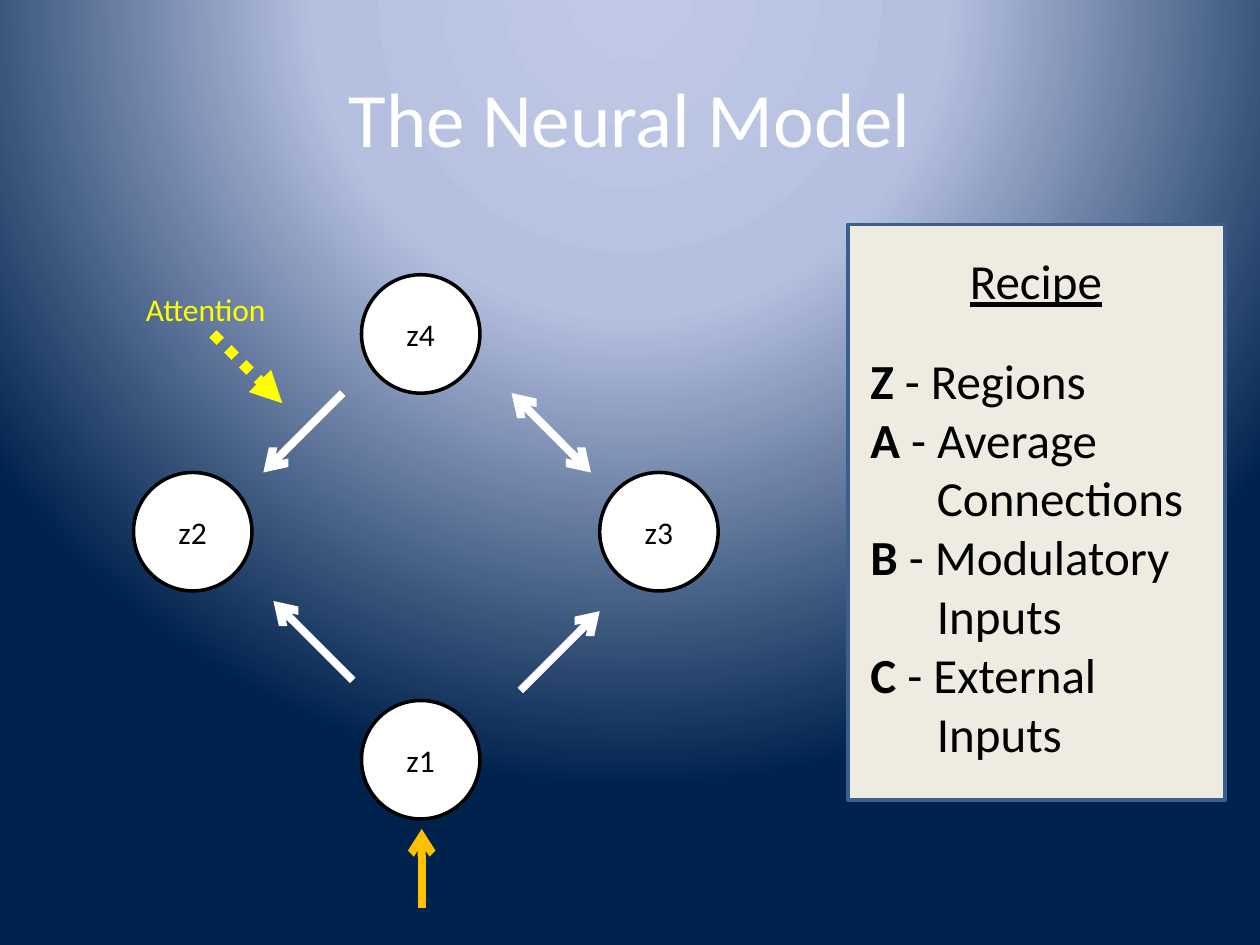
"""Build the neural model slide: four linked regions and a recipe of terms."""
from typing import NamedTuple, Optional

from lxml import etree
from pptx import Presentation
from pptx.dml.color import RGBColor
from pptx.enum.dml import MSO_LINE
from pptx.enum.shapes import MSO_CONNECTOR, MSO_SHAPE
from pptx.enum.text import MSO_ANCHOR, PP_ALIGN
from pptx.oxml import parse_xml
from pptx.oxml.ns import nsdecls, qn
from pptx.shapes.autoshape import Shape
from pptx.slide import Slide
from pptx.text.text import TextFrame
from pptx.util import Pt

STRAIGHT = MSO_CONNECTOR.STRAIGHT
ELLIPSE, RECTANGLE = MSO_SHAPE.OVAL, MSO_SHAPE.RECTANGLE
MIDDLE = MSO_ANCHOR.MIDDLE
LEFT, CENTER = PP_ALIGN.LEFT, PP_ALIGN.CENTER
DOTTED = MSO_LINE.ROUND_DOT

WHITE = RGBColor(0xFF, 0xFF, 0xFF)
BLACK = RGBColor(0x00, 0x00, 0x00)
YELLOW = RGBColor(0xFF, 0xFF, 0x00)
ORANGE = RGBColor(0xFF, 0xC0, 0x00)
CREAM = RGBColor(0xEE, 0xEC, 0xE1)
BORDER_BLUE = RGBColor(0x3A, 0x5F, 0x8C)
BACKDROP_STOPS = (
    (0, RGBColor(0xBF, 0xC9, 0xE5)),
    (40, RGBColor(0xB5, 0xC0, 0xE0)),
    (100, RGBColor(0x00, 0x23, 0x4D)),
)

FONT = "Calibri"
DIAMETER = 67.7
STEP = 45.36
HANGING = 38


class Box(NamedTuple):
    left: float
    top: float
    width: float
    height: float


class Region(NamedTuple):
    label: str
    left: float
    top: float


class Arrow(NamedTuple):
    x: float
    y: float
    dx: float
    dy: float
    color: RGBColor = WHITE
    weight: float = 4.5
    head: Optional[str] = None
    tail: str = "arrow"
    dash: Optional[MSO_LINE] = None


class Term(NamedTuple):
    letter: str
    meaning: str
    continuation: str = ""


REGIONS = (
    Region("z4", 206.6, 157),
    Region("z2", 76.3, 270),
    Region("z3", 342.7, 270),
    Region("z1", 206.6, 400.3),
)
ARROWS = (
    Arrow(195.84, 224.64, -STEP, STEP),
    Arrow(337.68, 270, -STEP, -STEP, head="arrow"),
    Arrow(297.36, 394.56, STEP, -STEP),
    Arrow(201.6, 388.8, -STEP, -STEP),
    Arrow(121.7, 190.8, 39.6, 39.6, YELLOW, 6, tail="triangle", dash=DOTTED),
    Arrow(241, 519.1, 0, -STEP, ORANGE),
)
RECIPE = (
    Term("Z", "Regions"),
    Term("A", "Average", "Connections"),
    Term("B", "Modulatory", "Inputs"),
    Term("C", "External", "Inputs"),
)


def paint_background(slide: Slide) -> None:
    """Fill the slide with a radial gradient centred above its top edge."""
    stops = "".join(
        f'<a:gs pos="{percent * 1000}"><a:srgbClr val="{color}"/></a:gs>'
        for percent, color in BACKDROP_STOPS
    )
    slide.element.cSld.insert(0, parse_xml(
        f'<p:bg {nsdecls("p", "a")}><p:bgPr><a:gradFill rotWithShape="1">'
        f'<a:gsLst>{stops}</a:gsLst><a:path path="circle">'
        '<a:fillToRect l="50000" t="-80000" r="50000" b="180000"/></a:path>'
        '</a:gradFill><a:effectLst/></p:bgPr></p:bg>'
    ))


def format_text(frame: TextFrame, size: float, color: RGBColor, align: PP_ALIGN) -> None:
    """Give every paragraph and run in a frame one common look."""
    for paragraph in frame.paragraphs:
        paragraph.alignment = align
        for run in paragraph.runs:
            run.font.name = FONT
            run.font.size = Pt(size)
            run.font.color.rgb = color


def add_outlined(slide: Slide, preset: MSO_SHAPE, box: Box, fill: RGBColor, line: RGBColor) -> Shape:
    """Draw a filled preset shape with a two-point outline."""
    shape = slide.shapes.add_shape(preset, *map(Pt, box))
    shape.shadow.inherit = False
    shape.fill.solid()
    shape.fill.fore_color.rgb = fill
    shape.line.color.rgb = line
    shape.line.width = Pt(2)
    return shape


def add_region(slide: Slide, region: Region) -> None:
    """Draw one labelled circle of the model."""
    circle = add_outlined(
        slide, ELLIPSE, Box(region.left, region.top, DIAMETER, DIAMETER), WHITE, BLACK
    )
    frame = circle.text_frame
    frame.text = region.label
    frame.vertical_anchor = MIDDLE
    format_text(frame, 18, BLACK, CENTER)


def add_arrow(slide: Slide, arrow: Arrow) -> None:
    """Draw one straight arrow from its start by its offset."""
    x, y, dx, dy = arrow[:4]
    connector = slide.shapes.add_connector(STRAIGHT, *map(Pt, (x, y, x + dx, y + dy)))
    connector.line.color.rgb = arrow.color
    connector.line.width = Pt(arrow.weight)
    if arrow.dash is not None:
        connector.line.dash_style = arrow.dash
    properties = connector.element.spPr
    outline = properties.find(qn("a:ln"))
    for tag, style in (("a:headEnd", arrow.head), ("a:tailEnd", arrow.tail)):
        if style:
            etree.SubElement(outline, qn(tag), type=style)
    etree.SubElement(properties, qn("a:effectLst"))


def add_caption(slide: Slide, text: str, box: Box, size: float, color: RGBColor,
                align: PP_ALIGN = LEFT, wrap: bool = False) -> TextFrame:
    """Write a single line of text in its own box."""
    frame = slide.shapes.add_textbox(*map(Pt, box)).text_frame
    frame.text = text
    frame.word_wrap = wrap
    format_text(frame, size, color, align)
    return frame


def add_recipe(slide: Slide) -> None:
    """List the model's terms, with indented continuation lines."""
    frame = slide.shapes.add_textbox(*map(Pt, Box(490.3, 196.6, 203.8, 244.8))).text_frame
    frame.word_wrap = True
    lines = [
        line for term in RECIPE
        for line in ((term.letter, f" - {term.meaning}"), ("", term.continuation)) if line[1]
    ]
    for index, (letter, wording) in enumerate(lines):
        paragraph = frame.add_paragraph() if index else frame.paragraphs[0]
        if letter:
            bold_letter = paragraph.add_run()
            bold_letter.text = letter
            bold_letter.font.bold = True
        else:
            paragraph._p.get_or_add_pPr().set("marL", str(Pt(HANGING)))
        paragraph.add_run().text = wording
    format_text(frame, 28, BLACK, LEFT)


def main() -> None:
    """Assemble and save the slide."""
    presentation = Presentation()
    presentation.slide_width, presentation.slide_height = Pt(720), Pt(540)
    slide = presentation.slides.add_slide(presentation.slide_layouts[6])
    paint_background(slide)
    add_outlined(slide, RECTANGLE, Box(484.6, 128.2, 215.3, 329), CREAM, BORDER_BLUE)
    title = add_caption(slide, "The Neural Model", Box(36, 21.6, 648, 90), 44, WHITE, CENTER, True)
    title.vertical_anchor = MIDDLE
    for region in REGIONS:
        add_region(slide, region)
    for arrow in ARROWS:
        add_arrow(slide, arrow)
    heading = add_caption(slide, "Recipe", Box(547.2, 139.7, 90.7, 41), 28, BLACK)
    heading.paragraphs[0].runs[0].font.underline = True
    add_recipe(slide)
    add_caption(slide, "Attention", Box(76.3, 162, 84.2, 28.8), 18, YELLOW)
    presentation.save("out.pptx")


if __name__ == "__main__":
    main()
